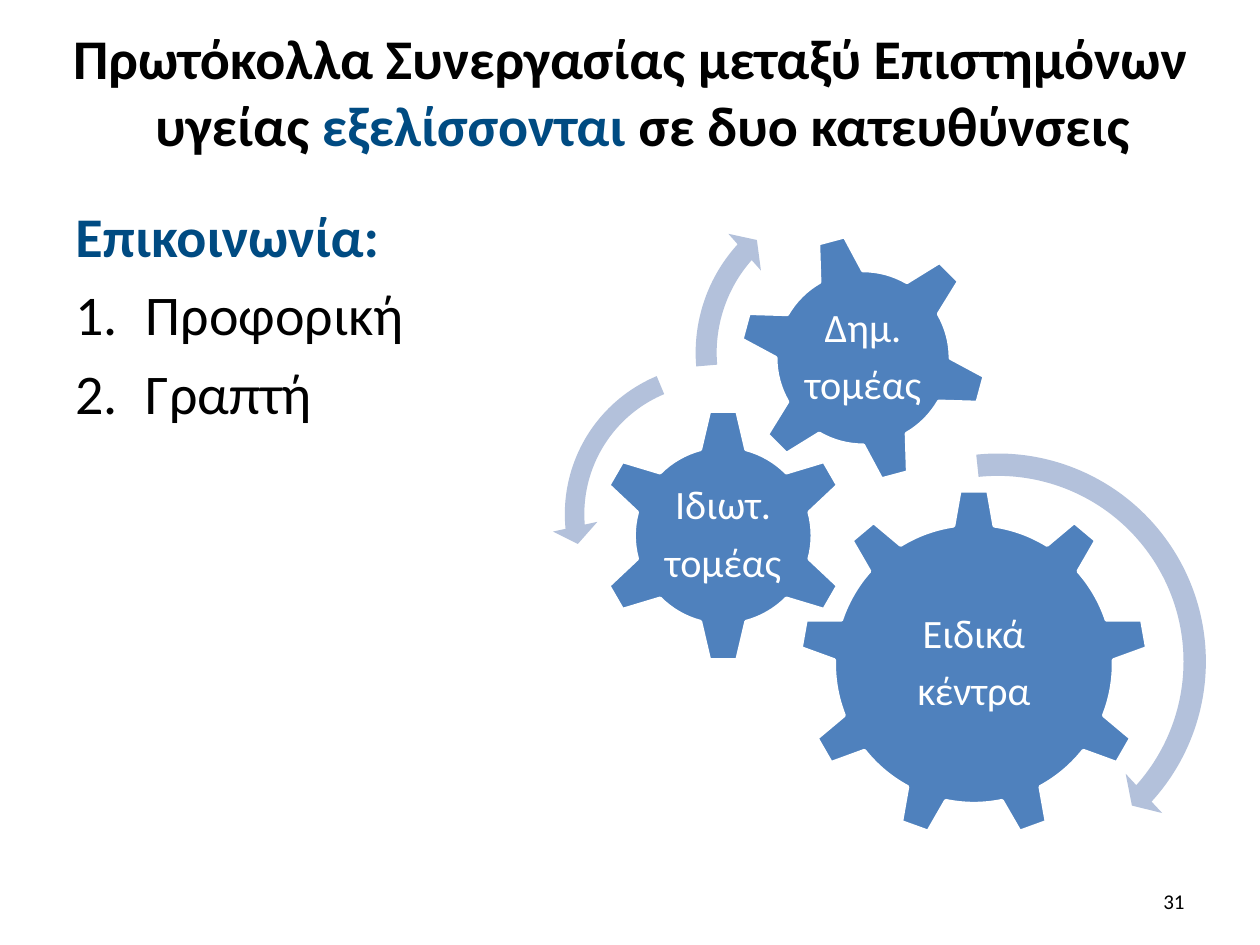
from pptx import Presentation
from pptx.dml.color import RGBColor
from pptx.enum.shapes import MSO_SHAPE as SHAPE
from pptx.enum.text import MSO_ANCHOR as ANCHOR, PP_ALIGN as ALIGN
from pptx.util import Inches, Pt
from lxml.etree import SubElement
from pptx.oxml.ns import qn

BLACK, NAVY, WHITE, BLUE, PALE = "000000", "004B82", "FFFFFF", "4F81BD", "B3C1DB"


def color(value):
    return RGBColor.from_string(value)


def add_run(p, text, size, rgb, bold=False):
    r = p.add_run()
    r.text = text
    r.font.name, r.font.size, r.font.bold = "Calibri", Pt(size), bold
    r.font.color.rgb = color(rgb)


prs = Presentation()
prs.slide_width, prs.slide_height = Inches(10), Inches(7.5)
slide = prs.slides.add_slide(prs.slide_layouts[5])
shapes = slide.shapes

# Title
title = shapes.title
title.left, title.top, title.width, title.height = map(Inches, (0.2, 0.13, 9.61, 1.18))
tf = title.text_frame
tf.word_wrap, tf.vertical_anchor = True, ANCHOR.MIDDLE
p = tf.paragraphs[0]
p.alignment = ALIGN.CENTER
pPr = p._p.get_or_add_pPr()
pPr.set("marL", str(Inches(0.29)))
pPr.set("indent", str(-Inches(0.29)))
for text, rgb in [
    ("Πρωτόκολλα Συνεργασίας μεταξύ Επιστημόνων υγείας ", BLACK),
    ("εξελίσσονται", NAVY),
    (" σε δυο κατευθύνσεις ", BLACK),
]:
    add_run(p, text, 32, rgb, bold=True)

# Heading and numbered list
tf = shapes.add_textbox(*map(Inches, (0.5, 1.55, 9, 5.28))).text_frame
tf.word_wrap = True
add_run(tf.paragraphs[0], "Επικοινωνία:", 32, NAVY, bold=True)
for item in ("Προφορική", "Γραπτή"):
    p = tf.add_paragraph()
    p.space_before = Pt(6.4)
    pPr = p._p.get_or_add_pPr()
    pPr.set("marL", str(Inches(0.56)))
    pPr.set("indent", str(-Inches(0.56)))
    SubElement(pPr, qn("a:buFont"), typeface="+mj-lt")
    SubElement(pPr, qn("a:buAutoNum"), type="arabicPeriod")
    add_run(p, item, 32, BLACK)

# Gears: preset, centre, size, rotation, label size, label lines
gears = [
    (SHAPE.GEAR_9, 7.73, 5.27, 2.77, 0, 1.66, 1.42, ("Ειδικά", "κέντρα")),
    (SHAPE.GEAR_6, 5.74, 4.25, 2.02, 0, 1, 0.99, ("Ιδιωτ.", "τομέας")),
    (SHAPE.GEAR_6, 6.85, 2.84, 1.98, 345, 1.11, 1.11, ("Δημ.", "τομέας")),
]
for preset, cx, cy, size, angle, w, h, lines in gears:
    s = shapes.add_shape(preset, *map(Inches, (cx - size / 2, cy - size / 2, size, size)))
    s.shadow.inherit = False
    s.rotation = angle
    s.fill.solid()
    s.fill.fore_color.rgb = color(BLUE)
    s.line.color.rgb = color(WHITE)
    s.line.width = Pt(2)

    tf = shapes.add_textbox(*map(Inches, (cx - w / 2, cy - h / 2, w, h))).text_frame
    tf.word_wrap, tf.vertical_anchor = True, ANCHOR.MIDDLE
    tf.margin_left = tf.margin_right = tf.margin_top = tf.margin_bottom = Inches(0.03)
    for i, line in enumerate(lines):
        p = tf.add_paragraph() if i else tf.paragraphs[0]
        p.alignment, p.line_spacing, p.space_after = ALIGN.CENTER, 0.9, Pt(8)
        add_run(p, line, 23, WHITE)

# Turning arrows: preset, centre, size, adjustments
arrows = [
    (SHAPE.CIRCULAR_ARROW, 7.92, 5.25, 3.55, (0.05, 2.99, 25.25, 158.42, 0.06)),
    (SHAPE.LEFT_CIRCULAR_ARROW, 5.67, 4.08, 2.58, (0.06, 4.3, 104.89, 148.38, 0.07)),
    (SHAPE.CIRCULAR_ARROW, 6.8, 2.8, 2.78, (0.06, 3.94, 133.14, 105.08, 0.07)),
]
for preset, cx, cy, size, adjustments in arrows:
    s = shapes.add_shape(preset, *map(Inches, (cx - size / 2, cy - size / 2, size, size)))
    s.shadow.inherit = False
    s.fill.solid()
    s.fill.fore_color.rgb = color(PALE)
    s.line.fill.background()
    for i, value in enumerate(adjustments):
        s.adjustments[i] = value

# Page number
tf = shapes.add_textbox(*map(Inches, (7.17, 6.95, 2.33, 0.4))).text_frame
tf.word_wrap, tf.vertical_anchor = True, ANCHOR.MIDDLE
p = tf.paragraphs[0]
p.alignment = ALIGN.RIGHT
add_run(p, "31", 12, BLACK)

prs.save("out.pptx")
